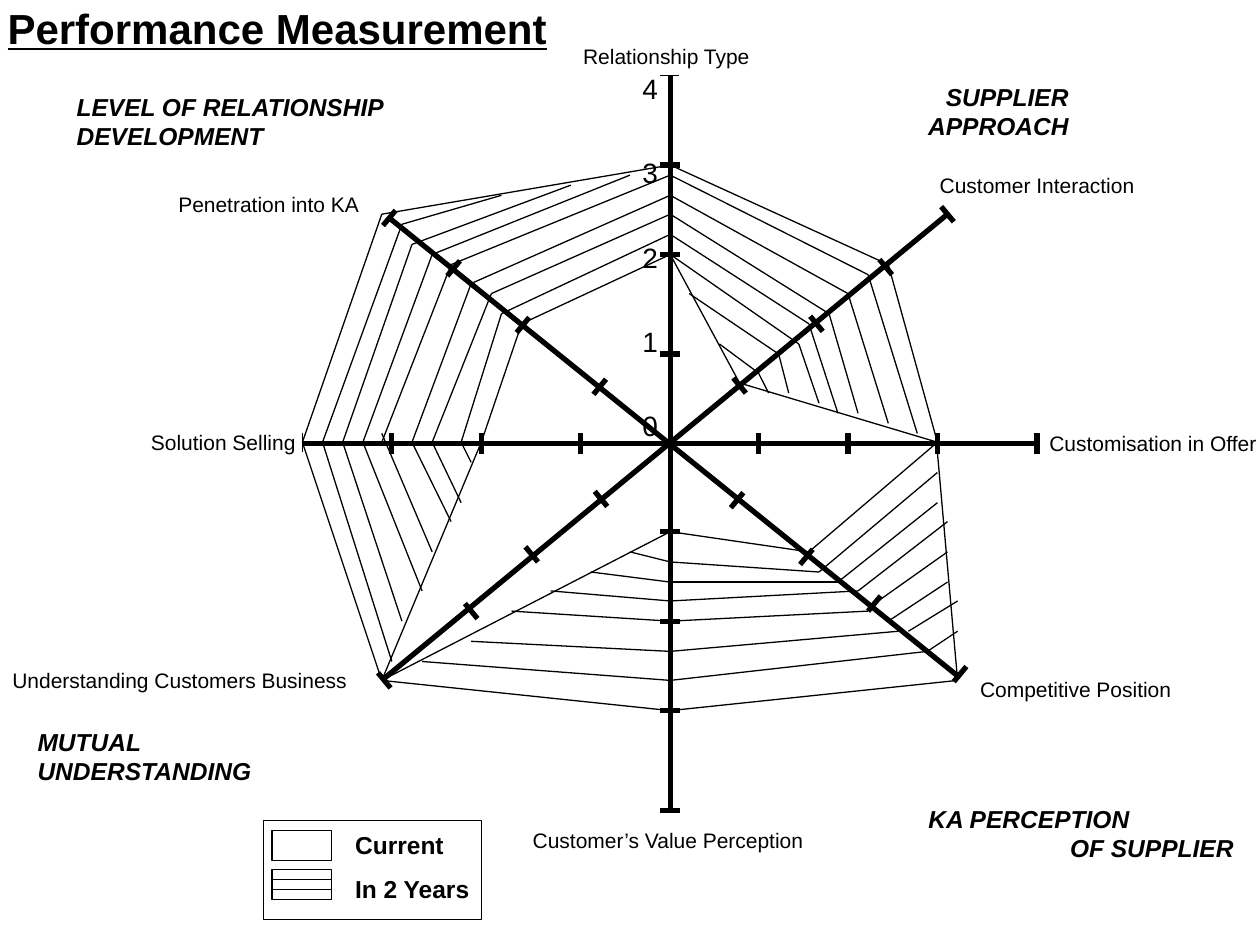
from dataclasses import dataclass

import pptx
import pptx.dml.color
import pptx.enum.shapes
import pptx.enum.text
import pptx.oxml.ns
import pptx.util
from lxml import etree

Inches = pptx.util.Inches
Align = pptx.enum.text.PP_ALIGN
Point = tuple[float, float]
BLACK = "000000"
THIN, THICK = 0.75, 3


@dataclass
class Axis:
    start: Point
    end: Point
    half_tick: Point
    ticks: list[Point]


@dataclass
class Label:
    text: str
    left: float
    top: float
    width: float
    align: Align = Align.LEFT


def color(code: str) -> pptx.dml.color.RGBColor:
    return pptx.dml.color.RGBColor.from_string(code)


def draw_line(page, start: Point, end: Point, width: float = THIN) -> None:
    line = page.shapes.add_connector(
        pptx.enum.shapes.MSO_CONNECTOR.STRAIGHT, *map(Inches, (*start, *end)))
    line.line.color.rgb = color(BLACK)
    line.line.width = pptx.util.Pt(width)
    etree.SubElement(line._element.spPr, pptx.oxml.ns.qn("a:effectLst"))


def draw_chain(page, points: list[Point]) -> None:
    for start, end in zip(points, points[1:]):
        draw_line(page, start, end)


def draw_axis(page, axis: Axis) -> None:
    draw_line(page, axis.start, axis.end, THICK)
    dx, dy = axis.half_tick
    for x, y in axis.ticks:
        draw_line(page, (x - dx, y - dy), (x + dx, y + dy), THICK)


def draw_frame(page, left: float, top: float, width: float, height: float) -> None:
    frame = page.shapes.add_shape(
        pptx.enum.shapes.MSO_SHAPE.RECTANGLE, *map(Inches, (left, top, width, height)))
    frame.shadow.inherit = False
    frame.fill.background()
    frame.line.color.rgb = color(BLACK)
    frame.line.width = pptx.util.Pt(THIN)


def write(box, text: str, *, size: float, bold=False, italic=False, underline=False,
          aligns=(Align.LEFT,), gap: float = 0) -> None:
    """Fill a box, one paragraph per line; gap is the space between paragraphs."""
    frame = box.text_frame
    frame.word_wrap = True
    frame.auto_size = pptx.enum.text.MSO_AUTO_SIZE.NONE
    frame.vertical_anchor = pptx.enum.text.MSO_ANCHOR.TOP
    for index, line in enumerate(text.split("\n")):
        para = frame.add_paragraph() if index else frame.paragraphs[0]
        para.alignment = aligns[min(index, len(aligns) - 1)]
        para.space_before = pptx.util.Pt(gap if index else 0)
        span = para.add_run()
        span.text = line
        font = span.font
        font.name, font.size = "Arial", pptx.util.Pt(size)
        font.bold, font.italic, font.underline = bold, italic, underline
        font.color.rgb = color(BLACK)


def add_text(page, text: str, left: float, top: float, width: float, height: float,
             **style) -> None:
    box = page.shapes.add_textbox(*map(Inches, (left, top, width, height)))
    write(box, text, **style)


AXES = [
    Axis((5.32, 0.6), (5.32, 6.43), (0.08, 0),
         [(5.32, y) for y in (1.31, 2.02, 2.81, 4.22, 4.93, 5.64, 6.43)]),
    Axis((7.52, 1.7), (3.03, 5.4), (0.05, 0.06),
         [(5.87, 3.06), (6.48, 2.57), (7.03, 2.12), (7.52, 1.7),
          (3.05, 5.4), (3.74, 4.85), (4.22, 4.4), (4.77, 3.96)]),
    Axis((2.4, 3.52), (8.23, 3.52), (0, 0.08),
         [(x, 3.52) for x in (3.11, 3.82, 4.61, 6.02, 6.73, 7.44, 8.23)]),
    Axis((3.09, 1.73), (7.62, 5.38), (0.05, -0.06),
         [(4.76, 3.07), (4.15, 2.58), (3.6, 2.13), (3.09, 1.73),
          (7.62, 5.35), (6.94, 4.79), (6.4, 4.42), (5.85, 3.97)]),
]
END_TICKS = [[(5.24, 0.6), (5.39, 0.6)], [(2.4, 3.44), (2.4, 3.59)]]

FUTURE = [
    [(7.44, 3.51), (7.05, 2.1), (5.32, 1.31), (3.03, 1.7), (2.4, 3.51),
     (3.03, 5.4), (5.32, 5.64), (7.6, 5.4), (7.44, 3.59)],
]
CURRENT = [
    [(3.03, 5.4), (3.82, 3.51), (4.14, 2.57), (5.32, 2.02), (5.87, 3.04),
     (7.44, 3.51), (6.42, 4.38), (5.32, 4.22), (3.03, 5.4)],
]
UPPER_HATCH = [
    [(3.11, 5.25), (2.56, 3.51), (3.19, 1.78), (3.98, 1.55)],
    [(3.19, 4.93), (2.72, 3.51), (3.27, 1.94), (4.53, 1.47)],
    [(3.35, 4.69), (2.88, 3.51), (3.43, 2.02), (5, 1.39)],
    [(3.43, 4.38), (3.03, 3.44)],
    [(3.03, 3.51), (3.58, 2.1), (5.32, 1.39), (6.89, 2.18), (7.28, 3.44)],
    [(3.58, 4.14), (3.27, 3.51), (3.74, 2.25), (5.32, 1.55), (6.73, 2.33), (7.05, 3.36)],
    [(3.66, 3.99), (3.43, 3.51), (3.9, 2.33), (5.32, 1.7), (6.58, 2.49), (6.81, 3.28)],
    [(3.74, 3.67), (3.66, 3.51), (3.98, 2.49), (5.32, 1.86), (6.42, 2.57), (6.65, 3.28)],
    [(5.32, 2.02), (6.34, 2.73), (6.5, 3.2)],
    [(5.47, 2.33), (6.18, 2.81), (6.26, 3.12)],
    [(5.71, 2.73), (6.02, 2.96), (6.1, 3.12)],
]
LOWER_HATCH = [
    [(7.44, 3.75), (6.5, 4.54), (5.32, 4.46), (5, 4.38)],
    [(7.44, 3.99), (6.65, 4.62), (5.32, 4.62), (4.69, 4.54)],
    [(7.52, 4.14), (6.81, 4.69), (5.32, 4.77), (4.37, 4.69)],
    [(7.52, 4.38), (6.97, 4.77)],
    [(6.89, 4.85), (5.32, 4.93), (4.06, 4.85)],
    [(7.52, 4.62), (7.05, 4.93)],
    [(7.13, 5.01), (5.32, 5.17), (3.74, 5.09)],
    [(7.6, 4.77), (7.21, 5.01)],
    [(7.6, 5.01), (7.36, 5.17), (5.32, 5.4), (3.35, 5.25)],
]

AXIS_LABELS = [
    Label("Relationship Type", 4.53, 0.3, 1.73),
    Label("Customer Interaction", 7.36, 1.32, 2.2),
    Label("Customisation in Offer", 8.23, 3.37, 2.01),
    Label("Competitive Position", 7.68, 5.32, 2.01),
    Label("Customer’s Value Perception", 4.13, 6.52, 2.36),
    Label("Understanding Customers Business", 0, 5.25, 2.87),
    Label("Solution Selling", 1.1, 3.36, 1.53),
    Label("Penetration into KA", 1.18, 1.47, 1.77, Align.RIGHT),
]
QUADRANTS = [
    Label("LEVEL OF RELATIONSHIP DEVELOPMENT", 0.51, 0.68, 2.84),
    Label("SUPPLIER\nAPPROACH", 6.34, 0.6, 2.24, Align.RIGHT),
    Label("MUTUAL\nUNDERSTANDING", 0.2, 5.72, 2.76),
]


def main() -> None:
    deck = pptx.Presentation()
    deck.slide_width, deck.slide_height = Inches(10), Inches(7.5)
    page = deck.slides.add_slide(deck.slide_layouts[5])

    # Title
    title = page.shapes.title
    title.left, title.top, title.width, title.height = map(Inches, (-0.04, -0.03, 4.96, 0.5))
    write(title, "Performance Measurement", size=24, bold=True, underline=True)

    # Axes and their scale
    for axis in AXES:
        draw_axis(page, axis)
    add_text(page, "4\n3\n2\n1\n0", 5, 0.52, 0.39, 3.17, size=16, gap=29)

    # Radar outlines and the hatching between them
    for chain in END_TICKS + FUTURE + CURRENT + UPPER_HATCH + LOWER_HATCH:
        draw_chain(page, chain)

    # Legend
    draw_frame(page, 2.09, 6.51, 1.73, 0.79)
    for top in (6.59, 6.9):
        draw_frame(page, 2.16, top, 0.47, 0.24)
    for y in (6.98, 7.06):
        draw_line(page, (2.16, y), (2.63, y))
    add_text(page, "Current\nIn 2 Years", 2.72, 6.54, 1.3, 0.68, size=14, bold=True, gap=8)

    # Labels
    for label in AXIS_LABELS:
        add_text(page, label.text, label.left, label.top, label.width, 0.3,
                 size=12, aligns=(label.align,))
    for label in QUADRANTS:
        add_text(page, label.text, label.left, label.top, label.width, 0.57,
                 size=14, bold=True, italic=True, aligns=(label.align,))
    add_text(page, "KA PERCEPTION\nOF SUPPLIER", 7.27, 6.33, 2.62, 0.57, size=14,
             bold=True, italic=True, aligns=(Align.LEFT, Align.RIGHT))

    deck.save("out.pptx")


if __name__ == "__main__":
    main()
